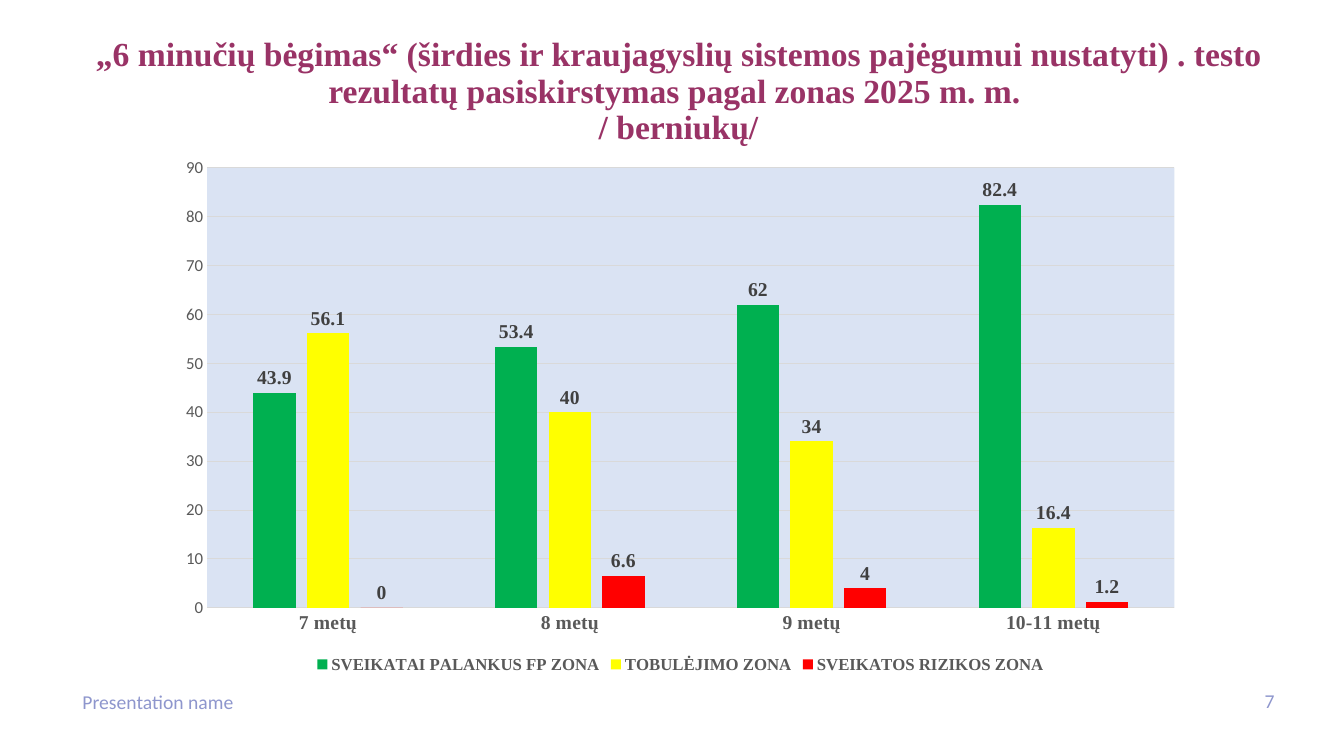
from dataclasses import dataclass
from lxml import etree
from pptx import Presentation
from pptx.chart.data import CategoryChartData as Data
from pptx.dml.color import RGBColor as RGB
from pptx.enum.chart import XL_CHART_TYPE as Kind, XL_LABEL_POSITION as Spot
from pptx.enum.chart import XL_LEGEND_POSITION as Side, XL_TICK_MARK as Tick
from pptx.enum.text import MSO_ANCHOR as Anchor, PP_ALIGN as Align
from pptx.oxml import parse_xml
from pptx.oxml.ns import nsdecls, qn
from pptx.util import Inches, Pt


@dataclass(frozen=True)
class Theme:
    serif: str = "Times New Roman"
    sans: str = "Calibri"
    title: str = "993366"
    foot: str = "8E96CD"
    axis: str = "595959"
    label: str = "404040"
    grid: str = "D9D9D9"
    plot: str = "DAE3F3"
    zones: tuple = ("00B050", "FFFF00", "FF0000")
    big: int = 24
    mid: int = 14
    small: int = 12


def style(font, face, size, color, bold=False):
    font.name, font.size, font.bold = face, Pt(size), bold
    font.color.rgb = RGB.from_string(color)


class Page:
    def __init__(self, deck, theme):
        self.theme = theme
        self.slide = deck.slides.add_slide(deck.slide_layouts[6])

    def text(self, text, box, face, size, color, bold=False,
             align=Align.LEFT, anchor=Anchor.TOP, space=1.0):
        shape = self.slide.shapes.add_textbox(*map(Inches, box))
        frame = shape.text_frame
        frame.word_wrap, frame.vertical_anchor = True, anchor
        para = frame.paragraphs[0]
        para.text = text
        para.alignment, para.line_spacing = align, space
        for run in para.runs:
            style(run.font, face, size, color, bold)

    def line(self, form):
        form.line.color.rgb = RGB.from_string(self.theme.grid)
        form.line.width = Pt(0.75)

    def chart(self, groups, zones, box, area):
        look = self.theme
        data = Data()
        data.categories = groups
        for name, vals in zones.items():
            data.add_series(name, vals)
        chart = self.slide.shapes.add_chart(
            Kind.COLUMN_CLUSTERED, *map(Inches, box), data).chart
        chart.has_title = False
        style(chart.font, look.sans, 10, "000000")

        # Columns and their values
        plot = chart.plots[0]
        plot.gap_width, plot.overlap = 219, -27
        plot.vary_by_categories = False
        for bars, color in zip(plot.series, look.zones):
            bars.format.fill.solid()
            bars.format.fill.fore_color.rgb = RGB.from_string(color)
            bars.invert_if_negative = False
            tags = bars.data_labels
            tags.show_value, tags.position = True, Spot.OUTSIDE_END
            style(tags.font, look.serif, look.mid, look.label, True)

        # Axes
        cat, val = chart.category_axis, chart.value_axis
        for axis in (cat, val):
            axis.major_tick_mark = axis.minor_tick_mark = Tick.NONE
        style(cat.tick_labels.font, look.serif, look.mid, look.axis, True)
        style(val.tick_labels.font, look.sans, look.small, look.axis)
        self.line(cat.format)
        val.format.line.fill.background()
        self.line(val.major_gridlines.format)
        val.minimum_scale, val.maximum_scale, val.major_unit = 0, 90, 10

        # Legend
        chart.has_legend = True
        chart.legend.position = Side.BOTTOM
        chart.legend.include_in_layout = False
        style(chart.legend.font, look.serif, look.small, look.axis, True)
        self.place(chart, area)

    def place(self, chart, area):
        """Set the inner plot frame and its background."""
        root = chart.element.find(".//" + qn("c:plotArea"))
        for old in root.findall(qn("c:layout")):
            root.remove(old)
        frame = parse_xml(f"<c:layout {nsdecls('c')}/>")
        inner = etree.SubElement(frame, qn("c:manualLayout"))
        tags = ("layoutTarget", "xMode", "yMode", "x", "y", "w", "h")
        for tag, val in zip(tags, ("inner", "edge", "edge", *area)):
            etree.SubElement(inner, qn("c:" + tag)).set("val", str(val))
        root.insert(0, frame)
        root.append(parse_xml(
            f"<c:spPr {nsdecls('c', 'a')}><a:solidFill>"
            f'<a:srgbClr val="{self.theme.plot}"/>'
            "</a:solidFill></c:spPr>"))


def main():
    deck = Presentation()
    deck.slide_width, deck.slide_height = Inches(13.33), Inches(7.5)
    look = Theme()
    page = Page(deck, look)

    # Title
    page.text("„6 minučių bėgimas“ (širdies ir kraujagyslių sistemos pajėgumui "
              "nustatyti) . testo rezultatų pasiskirstymas pagal zonas "
              "2025 m. m. \v/ berniukų/",
              (0.72, 0.28, 12.02, 1.27), look.serif, look.big, look.title,
              bold=True, align=Align.CENTER, anchor=Anchor.MIDDLE, space=0.9)

    # Results by age and zone
    page.chart(("7 metų", "8 metų", "9 metų", "10-11 metų"), {
        "SVEIKATAI PALANKUS FP ZONA": (43.9, 53.4, 62, 82.4),
        "TOBULĖJIMO ZONA": (56.1, 40, 34, 16.4),
        "SVEIKATOS RIZIKOS ZONA": (0, 6.6, 4, 1.2),
    }, (1.68, 1.39, 10.14, 5.33), (0.037, 0.051, 0.946, 0.82))

    # Footer
    page.text("Presentation name", (0.72, 6.79, 6.3, 0.38),
              look.sans, look.mid, look.foot)
    page.text("7", (12.22, 6.79, 0.52, 0.4),
              look.sans, look.mid, look.foot, align=Align.RIGHT)
    deck.save("out.pptx")


if __name__ == "__main__":
    main()
